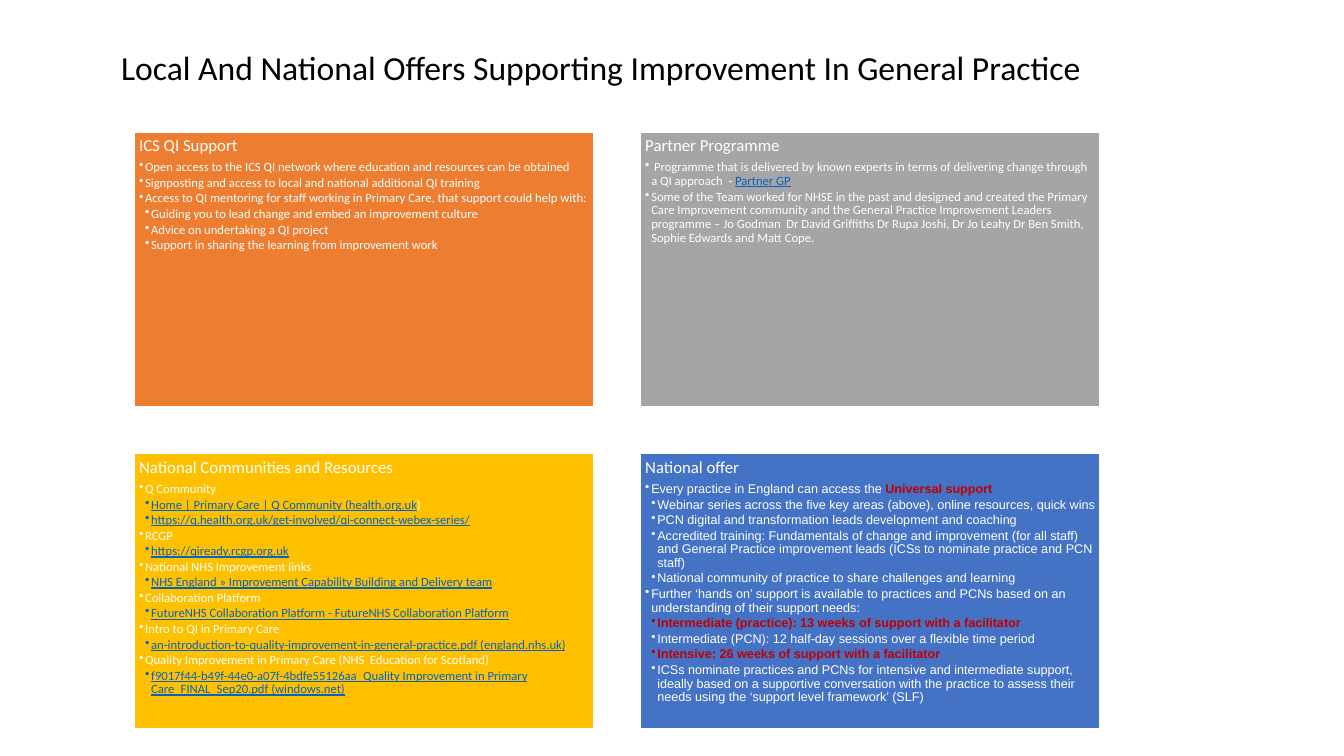
from lxml.etree import SubElement
from pptx import Presentation
from pptx.dml.color import RGBColor
from pptx.enum.shapes import MSO_SHAPE
from pptx.enum.text import MSO_ANCHOR, MSO_AUTO_SIZE, PP_ALIGN
from pptx.oxml.ns import qn
from pptx.util import Inches, Pt

WHITE = "FFFFFF"
PLAIN = {"color": WHITE}
LINK = {"color": "0563C1", "underline": True}
STRONG = {"color": "C00000", "bold": True}

CARD_LEFT, CARD_TOP = 1.33, 1.31
CARD_WIDTH, CARD_HEIGHT = 4.56, 2.73
COLUMN_STEP, ROW_STEP = 5.02, 3.19
INDENT = 0.06

CARDS = [
    ("ICS QI Support", "ED7D31", "Calibri", [
        (1, [("Open access to the ICS QI network where education and resources can be obtained", PLAIN)]),
        (1, [("Signposting and access to local and national additional QI training", PLAIN)]),
        (1, [("Access to QI mentoring for staff working in Primary Care, that support could help with:", PLAIN)]),
        (2, [("Guiding you to lead change and embed an improvement culture", PLAIN)]),
        (2, [("Advice on undertaking a QI project", PLAIN)]),
        (2, [("Support in sharing the learning from improvement work", PLAIN)]),
    ]),
    ("Partner Programme", "A5A5A5", "Calibri", [
        (1, [(" Programme that is delivered by known experts in terms of delivering change through "
              "a QI approach  - ", PLAIN), ("Partner GP", LINK)]),
        (1, [("Some of the Team worked for NHSE in the past and designed and created the Primary Care "
              "Improvement community and the General Practice Improvement Leaders programme – "
              "Jo Godman  Dr David Griffiths Dr Rupa Joshi, Dr Jo Leahy Dr Ben Smith, "
              "Sophie Edwards and Matt Cope.", PLAIN)]),
    ]),
    ("National Communities and Resources", "FFC000", "Calibri", [
        (1, [("Q Community", PLAIN)]),
        (2, [("Home | Primary Care | Q Community (health.org.uk", LINK), (")", PLAIN)]),
        (2, [("https://q.health.org.uk/get-involved/qi-connect-webex-series/", LINK)]),
        (1, [("RCGP", PLAIN)]),
        (2, [("https://qiready.rcgp.org.uk", LINK)]),
        (1, [("National NHS Improvement links", PLAIN)]),
        (2, [("NHS England » Improvement Capability Building and Delivery team", LINK)]),
        (1, [("Collaboration Platform", PLAIN)]),
        (2, [("FutureNHS Collaboration Platform - FutureNHS Collaboration Platform", LINK)]),
        (1, [("Intro to QI in Primary Care", PLAIN)]),
        (2, [("an-introduction-to-quality-improvement-in-general-practice.pdf (england.nhs.uk)", LINK)]),
        (1, [("Quality Improvement in Primary Care (NHS  Education for Scotland)", PLAIN)]),
        (2, [("f9017f44-b49f-44e0-a07f-4bdfe55126aa_Quality Improvement in Primary "
              "Care_FINAL_Sep20.pdf (windows.net)", LINK)]),
    ]),
    ("National offer", "4472C4", "Arial", [
        (1, [("Every practice in England can access the ", PLAIN), ("Universal support", STRONG)]),
        (2, [("Webinar series across the five key areas (above), online resources, quick wins", PLAIN)]),
        (2, [("PCN digital and transformation leads development and coaching", PLAIN)]),
        (2, [("Accredited training: Fundamentals of change and improvement (for all staff) and General "
              "Practice improvement leads (ICSs to nominate practice and PCN staff)", PLAIN)]),
        (2, [("National community of practice to share challenges and learning", PLAIN)]),
        (1, [("Further ‘hands on’ support is available to practices and PCNs based on an "
              "understanding of their support needs:", PLAIN)]),
        (2, [("Intermediate (practice): 13 weeks of support with a facilitator", STRONG)]),
        (2, [("Intermediate (PCN): 12 half-day sessions over a flexible time period", PLAIN)]),
        (2, [("Intensive: 26 weeks of support with a facilitator", STRONG)]),
        (2, [("ICSs nominate practices and PCNs for intensive and intermediate support, ideally based on "
              "a supportive conversation with the practice to assess their needs using the "
              "‘support level framework’ (SLF)", PLAIN)]),
    ]),
]


def rgb(value):
    return RGBColor.from_string(value)


def set_all(target, values):
    for name, value in values.items():
        setattr(target, name, value)


def add_span(para, text, font, size, color, **extra):
    span = para.add_run()
    span.text = text
    set_all(span.font, {"name": font, "size": Pt(size), **extra})
    span.font.color.rgb = rgb(color)


def add_bullet(para, level):
    properties = para._p.get_or_add_pPr()
    properties.set("marL", str(Inches(INDENT * level)))
    properties.set("indent", str(Inches(-INDENT)))
    SubElement(properties, qn("a:buChar")).set("char", "•")


def add_title(page, left, top, width, height):
    box = page.shapes.add_textbox(Inches(left), Inches(top), Inches(width), Inches(height))
    set_all(box.text_frame, {"word_wrap": False, "auto_size": MSO_AUTO_SIZE.SHAPE_TO_FIT_TEXT})
    para = box.text_frame.paragraphs[0]
    para.alignment = PP_ALIGN.CENTER
    add_span(para, "Local And National Offers Supporting Improvement In General Practice",
             "Calibri", 24, "000000")


def add_card(page, left, top, width, height, heading, fill, font, items):
    card = page.shapes.add_shape(MSO_SHAPE.RECTANGLE, Inches(left), Inches(top),
                                 Inches(width), Inches(height))
    card.shadow.inherit = False
    card.fill.solid()
    card.fill.fore_color.rgb = rgb(fill)
    card.line.color.rgb = rgb(WHITE)
    card.line.width = Pt(1)
    frame = card.text_frame
    set_all(frame, {"word_wrap": True, "vertical_anchor": MSO_ANCHOR.TOP})
    set_all(frame, {f"margin_{side}": Inches(0.05) for side in ("left", "top", "right", "bottom")})

    para = frame.paragraphs[0]
    set_all(para, {"alignment": PP_ALIGN.LEFT, "line_spacing": 0.9, "space_after": Pt(4.2)})
    add_span(para, heading, "Calibri", 12, WHITE)
    for level, spans in items:
        para = frame.add_paragraph()
        add_bullet(para, level)
        set_all(para, {"level": level, "alignment": PP_ALIGN.LEFT,
                       "line_spacing": 0.9, "space_after": Pt(1.35)})
        for text, style in spans:
            add_span(para, text, font, 9, **style)


def main():
    deck = Presentation()
    set_all(deck, {"slide_width": Inches(13.33), "slide_height": Inches(7.5)})
    page = deck.slides.add_slide(deck.slide_layouts[6])
    for index, card in enumerate(CARDS):
        row, column = divmod(index, 2)
        add_card(page, CARD_LEFT + column * COLUMN_STEP, CARD_TOP + row * ROW_STEP,
                 CARD_WIDTH, CARD_HEIGHT, *card)
    add_title(page, 1.05, 0.42, 9.82, 0.5)
    deck.save("out.pptx")


if __name__ == "__main__":
    main()
